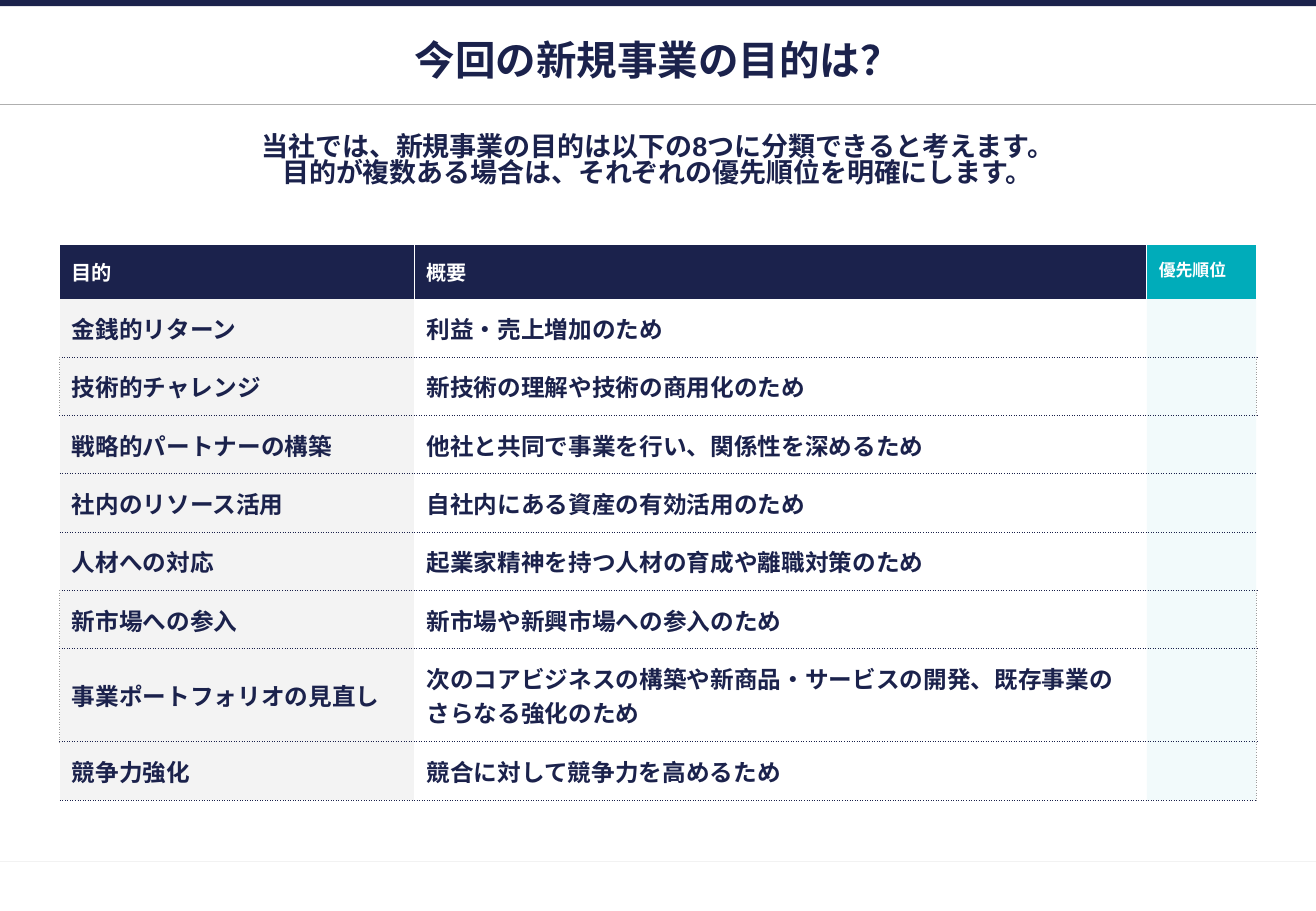
from dataclasses import dataclass

from lxml import etree
from pptx import Presentation
from pptx.dml.color import RGBColor
from pptx.enum import shapes, text
from pptx.oxml import ns
from pptx.util import Cm, Pt


@dataclass(frozen=True)
class Theme:
    """Colours, font and type sizes of the slide."""
    navy: str = "1B224C"
    teal: str = "00ACBA"
    priority_tint: str = "00ACBB"
    white: str = "FFFFFF"
    purpose_grey: str = "F3F3F3"
    title_rule: str = "AFAFAF"
    footer_rule: str = "F2F2F2"
    side_border: str = "9E9E9E"
    font: str = "Arial"
    title: int = 24
    lead: int = 16
    body: int = 14
    header: int = 12
    priority: int = 10
    rule: float = 0.75


THEME = Theme()
WIDTH, HEIGHT = 27.51, 19.05
MARGIN = 1.25
TITLE = "今回の新規事業の目的は？"
LEAD = [
    "当社では、新規事業の目的は以下の8つに分類できると考えます。",
    "目的が複数ある場合は、それぞれの優先順位を明確にします。",
]
HEADERS = [
    ("目的", THEME.header, THEME.navy),
    ("概要", THEME.header, THEME.navy),
    ("優先順位", THEME.priority, THEME.teal),
]
PURPOSES = [
    ("金銭的リターン", "利益・売上増加のため"),
    ("技術的チャレンジ", "新技術の理解や技術の商用化のため"),
    ("戦略的パートナーの構築", "他社と共同で事業を行い、関係性を深めるため"),
    ("社内のリソース活用", "自社内にある資産の有効活用のため"),
    ("人材への対応", "起業家精神を持つ人材の育成や離職対策のため"),
    ("新市場への参入", "新市場や新興市場への参入のため"),
    ("事業ポートフォリオの見直し",
     "次のコアビジネスの構築や新商品・サービスの開発、既存事業のさらなる強化のため"),
    ("競争力強化", "競合に対して競争力を高めるため"),
]
COLUMN_SHARES = (2.92, 6.03, 0.9)
HEADER_HEIGHT, ROW_HEIGHT, TALL_ROW_HEIGHT = 1.12, 1.22, 1.94
TALL_ROW = 7
LEFT_BORDER_ROWS = {2, 6, 7}
RIGHT_BORDER_ROWS = {2, 6, 7, 8}
NO_STYLE = "{2D5ABB26-0587-4C30-8999-92F81FD0307C}"


def add_run(paragraph, words, size, color):
    """Add one bold run to a paragraph."""
    run = paragraph.add_run()
    run.text = words
    run.font.name = THEME.font
    run.font.size = Pt(size)
    run.font.bold = True
    run.font.color.rgb = RGBColor.from_string(color)


def add_rule(slide, top, color):
    """Draw a thin line across the whole slide."""
    rule = slide.shapes.add_connector(
        shapes.MSO_CONNECTOR.STRAIGHT, 0, Cm(top), Cm(WIDTH), Cm(top))
    rule.line.color.rgb = RGBColor.from_string(color)
    rule.line.width = Pt(THEME.rule)
    etree.SubElement(rule._element.spPr, ns.qn("a:effectLst"))


def add_frame(slide):
    """Draw the top band and the two rules."""
    add_rule(slide, 18.01, THEME.footer_rule)
    band = slide.shapes.add_shape(
        shapes.MSO_SHAPE.RECTANGLE, 0, 0, Cm(WIDTH), Cm(0.13))
    band.shadow.inherit = False
    band.fill.solid()
    band.fill.fore_color.rgb = RGBColor.from_string(THEME.navy)
    band.line.fill.background()
    add_rule(slide, 2.18, THEME.title_rule)


def add_heading(slide, box, lines, size, anchor, spacing):
    """Place centred navy lines in a box."""
    heading = slide.shapes.add_textbox(*map(Cm, box)).text_frame
    heading.word_wrap = True
    heading.vertical_anchor = anchor
    heading.margin_left = heading.margin_right = Cm(0.1)
    heading.margin_top = heading.margin_bottom = Cm(0.1)
    for index, words in enumerate(lines):
        paragraph = heading.add_paragraph() if index else heading.paragraphs[0]
        paragraph.alignment = text.PP_ALIGN.CENTER
        paragraph.line_spacing = spacing
        add_run(paragraph, words, size, THEME.navy)


def set_borders(cell, borders):
    """Draw the given sides of a cell and clear the others."""
    properties = cell._tc.get_or_add_tcPr()
    for side in "LRTB":
        line = etree.SubElement(properties, ns.qn(f"a:ln{side}"))
        line.set("w", str(Pt(THEME.rule)))
        if side not in borders:
            etree.SubElement(line, ns.qn("a:noFill"))
            continue
        color, dash = borders[side]
        fill = etree.SubElement(line, ns.qn("a:solidFill"))
        etree.SubElement(fill, ns.qn("a:srgbClr")).set("val", color)
        etree.SubElement(line, ns.qn("a:prstDash")).set("val", dash)


def fill_cell(cell, color, opacity=100):
    """Fill a cell, with an opacity in percent."""
    cell.fill.solid()
    cell.fill.fore_color.rgb = RGBColor.from_string(color)
    if opacity < 100:
        tint = cell._tc.tcPr.find(f"{ns.qn('a:solidFill')}/{ns.qn('a:srgbClr')}")
        etree.SubElement(tint, ns.qn("a:alpha")).set("val", str(opacity * 1000))


def write_cell(cell, words, size, color, anchor):
    """Write one line of words in a padded cell."""
    cell.margin_left = cell.margin_right = Cm(0.25)
    cell.margin_top = cell.margin_bottom = Cm(0.25)
    cell.vertical_anchor = anchor
    add_run(cell.text_frame.paragraphs[0], words, size, color)


def body_borders(row, column):
    """Return the dotted borders of a body cell."""
    borders = {"B": (THEME.navy, "sysDot")}
    if row > 1:
        borders["T"] = (THEME.navy, "sysDot")
    if column == 0 and row in LEFT_BORDER_ROWS:
        borders["L"] = (THEME.side_border, "sysDot")
    if column == 2 and row in RIGHT_BORDER_ROWS:
        borders["R"] = (THEME.side_border, "sysDot")
    return borders


def add_purpose_table(slide, left, top, width):
    """Build the table of purposes with an empty priority column."""
    heights = [HEADER_HEIGHT] + [
        TALL_ROW_HEIGHT if row == TALL_ROW else ROW_HEIGHT
        for row in range(1, len(PURPOSES) + 1)]
    frame = slide.shapes.add_table(
        len(heights), len(HEADERS), Cm(left), Cm(top), Cm(width), Cm(sum(heights)))
    table = frame.table
    table.first_row = table.horz_banding = False
    table._tbl.tblPr.find(ns.qn("a:tableStyleId")).text = NO_STYLE
    for column, share in zip(table.columns, COLUMN_SHARES):
        column.width = Cm(width * share / sum(COLUMN_SHARES))
    for row, height in zip(table.rows, heights):
        row.height = Cm(height)

    divider = (THEME.white, "solid")
    for column, (words, size, color) in enumerate(HEADERS):
        cell = table.cell(0, column)
        sides = ("R", "LR", "L")[column]
        set_borders(cell, {side: divider for side in sides})
        fill_cell(cell, color)
        write_cell(cell, words, size, THEME.white, text.MSO_ANCHOR.TOP)

    for row, purpose in enumerate(PURPOSES, start=1):
        for column in range(len(HEADERS)):
            set_borders(table.cell(row, column), body_borders(row, column))
        for column, color in enumerate((THEME.purpose_grey, THEME.white)):
            cell = table.cell(row, column)
            fill_cell(cell, color)
            write_cell(cell, purpose[column], THEME.body, THEME.navy,
                       text.MSO_ANCHOR.MIDDLE)
        fill_cell(table.cell(row, 2), THEME.priority_tint, opacity=5)


def main():
    """Build and save the slide."""
    deck = Presentation()
    deck.slide_width, deck.slide_height = Cm(WIDTH), Cm(HEIGHT)
    slide = deck.slides.add_slide(deck.slide_layouts[6])
    inner = WIDTH - 2 * MARGIN
    add_frame(slide)
    add_heading(slide, (MARGIN, 2.72, inner, 1.9), LEAD, THEME.lead,
                text.MSO_ANCHOR.TOP, 0.82)
    add_heading(slide, (MARGIN, 0.74, inner, 1), [TITLE], THEME.title,
                text.MSO_ANCHOR.MIDDLE, 1)
    add_purpose_table(slide, MARGIN, 5.13, inner)
    deck.save("out.pptx")


if __name__ == "__main__":
    main()
